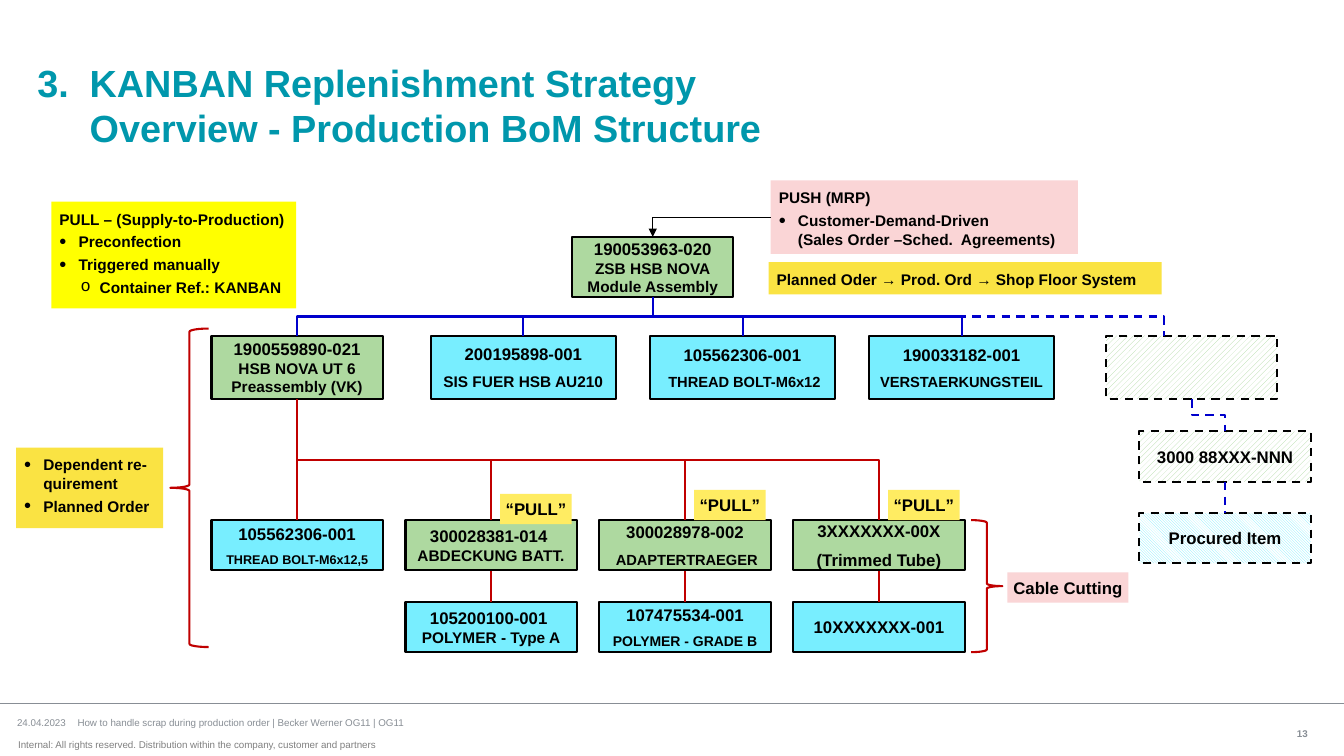
from pptx import Presentation, util as u
from pptx.dml.color import RGBColor
from pptx.enum import dml, shapes, text
from pptx.oxml import ns
from lxml import etree

GREEN, CYAN, BLACK, WHITE = "AED9A0", "78EEFF", "000000", "FFFFFF"
BLUE, RED, PINK, GOLD = "0000CC", "C00000", "FAD5D6", "FAE343"
GRAY, TEAL = "888E95", "0097AC"
UP = dml.MSO_PATTERN.WIDE_UPWARD_DIAGONAL
DOWN = dml.MSO_PATTERN.DARK_DOWNWARD_DIAGONAL
FORM, LINK = shapes.MSO_SHAPE, shapes.MSO_CONNECTOR
MID, TOP = text.MSO_ANCHOR.MIDDLE, text.MSO_ANCHOR.TOP
LEFT, MIDST, RIGHT = text.PP_ALIGN.LEFT, text.PP_ALIGN.CENTER, text.PP_ALIGN.RIGHT


def grid(*cells):
    return [u.Inches(cell / 10) for cell in cells]


def hue(code):
    return RGBColor.from_string(code)


def sub(node, tag, **attrs):
    return etree.SubElement(node, ns.qn("a:" + tag), attrs)


def style(para, size, color=BLACK, bold=True, align=LEFT, gap=0):
    para.alignment = align
    para.space_before = u.Pt(gap)
    font = para.font
    font.name, font.size, font.bold = "Arial", u.Pt(size), bold
    font.color.rgb = hue(color)


def frame(shape, inset=0, anchor=MID, wrap=True):
    body = shape.text_frame
    body.word_wrap, body.vertical_anchor = wrap, anchor
    body.auto_size = text.MSO_AUTO_SIZE.NONE
    body.margin_left = body.margin_right = u.Inches(inset)
    body.margin_top = body.margin_bottom = u.Inches(inset)
    return body


def paras(body, rows):
    for i, row in enumerate(rows):
        para = body.paragraphs[0] if i == 0 else body.add_paragraph()
        para.text = row[0]
        yield i, para, row


def form(slide, box, fill=None, edge=None, kind=FORM.RECTANGLE, mesh=None):
    shape = slide.shapes.add_shape(kind, *grid(*box))
    shape.shadow.inherit = False
    if mesh:
        shape.fill.patterned()
        shape.fill.pattern = mesh
        shape.fill.fore_color.rgb = hue(fill)
        shape.fill.back_color.rgb = hue(WHITE)
    elif fill:
        shape.fill.solid()
        shape.fill.fore_color.rgb = hue(fill)
    else:
        shape.fill.background()
    if edge:
        shape.line.color.rgb = hue(edge)
        shape.line.width = u.Pt(1.5)
    else:
        shape.line.fill.background()
    if mesh:
        shape.line.dash_style = dml.MSO_LINE.DASH
    return shape


def part(slide, box, fill, rows, mesh=None):
    shape = form(slide, box, fill, BLACK, mesh=mesh)
    for i, para, (_, size, gap) in paras(frame(shape, 0.08), rows):
        style(para, size, align=MIDST, gap=gap if i else 0)
    return shape


def tag(slide, box, fill, words):
    body = frame(form(slide, box, fill), 0.05, wrap=False)
    body.text = words
    style(body.paragraphs[0], 12, align=MIDST)


def note(slide, box, fill, rows):
    shape = form(slide, box, fill)
    for i, para, (_, mark) in paras(frame(shape, 0.08, TOP), rows):
        if mark:
            deep = mark == "o"
            props = para._p.get_or_add_pPr()
            props.set("marL", str(u.Inches(0.4 if deep else 0.19)))
            props.set("indent", str(-u.Inches(0.19)))
            sub(sub(props, "buClr"), "srgbClr", val=BLACK)
            sub(props, "buSzPct", val="110000" if deep else "130000")
            sub(props, "buFont", typeface="Courier New" if deep else "Arial")
            sub(props, "buChar", char=mark)
        style(para, 11, gap=3 if i else 0)
    return shape


def wire(slide, ends, color, kind=LINK.STRAIGHT, dash=False, width=1.5):
    line = slide.shapes.add_connector(kind, *ends)
    line.line.color.rgb = hue(color)
    line.line.width = u.Pt(width)
    if dash:
        line.line.dash_style = dml.MSO_LINE.DASH
    sub(line._element.spPr, "effectLst")
    return line


def foot_of(shape):
    return shape.left + shape.width // 2, shape.top + shape.height


def head_of(shape):
    return shape.left + shape.width // 2, shape.top


def drop(slide, above, below, color, dash=False):
    line = wire(slide, foot_of(above) + head_of(below), color, dash=dash)
    line.begin_connect(above, 2)
    line.end_connect(below, 0)


def bend(slide, above, below, color, dash=False, goal=None):
    x, y = foot_of(above)
    right, low = goal or head_of(below)
    line = wire(slide, (x, y, right, low), color, LINK.ELBOW, dash)
    line.begin_connect(above, 2)
    if not goal:
        line.end_connect(below, 0)
    wide, tall = abs(right - x), low - y
    line.left, line.top = (x + right - tall) // 2, (y + low - wide) // 2
    line.width, line.height = tall, wide
    turn = line._element.spPr.find(ns.qn("a:xfrm"))
    turn.attrib.pop("flipH", None)
    turn.set("rot", "16200000" if right > x else "5400000")
    if right > x:
        turn.set("flipH", "1")


def heading(slide, box):
    title = slide.shapes.title
    title.left, title.top, title.width, title.height = grid(*box)
    body = frame(title, anchor=TOP)
    body.text = "3.\tKANBAN Replenishment Strategy\vOverview - Production BoM Structure"
    props = body.paragraphs[0]._p.get_or_add_pPr()
    props.set("marL", str(u.Inches(0.52)))
    props.set("indent", str(-u.Inches(0.52)))
    style(body.paragraphs[0], 27, TEAL)


def footer(slide, box):
    x, y, w, h = box
    wire(slide, grid(x, y, x + w, y), GRAY, width=1)
    for place, words, color, bold, align in (
            ((1.7, 1.3, 75, 1.2), "24.04.2023\tHow to handle scrap during production order | Becker Werner OG11 | OG11", GRAY, False, LEFT),
            ((1.8, 3, 60, 2.2), "Internal: All rights reserved. Distribution within the company, customer and partners", "808080", False, LEFT),
            ((123, 2.4, 6.8, 1.2), "13", GRAY, True, RIGHT)):
        left, top, wide, tall = place
        area = slide.shapes.add_textbox(*grid(x + left, y + top, wide, tall))
        body = frame(area)
        body.text = words
        para = body.paragraphs[0]
        if "\t" in words:
            tabs = sub(para._p.get_or_add_pPr(), "tabLst")
            sub(tabs, "tab", pos=str(u.Inches(0.6)), algn="l")
        style(para, 7, color, bold, align)


def upper(slide, box):
    x, y, w, h = box
    root = part(slide, (x + 35.8, y, 16, 6), GREEN, [
        ("190053963-020", 12, 0), ("ZSB HSB NOVA", 11, 0), ("Module Assembly", 11, 0)])
    rows = [
        [("1900559890-021", 12, 0), ("HSB NOVA UT 6", 11, 0), ("Preassembly (VK)", 11, 0)],
        [("200195898-001", 12, 0), ("SIS FUER HSB AU210", 11, 6)],
        [("105562306-001", 12, 0), (" THREAD BOLT-M6x12", 10.5, 6)],
        [("190033182-001", 12, 0), ("VERSTAERKUNGSTEIL", 10.5, 6)]]
    kids = []
    for i, lines in enumerate(rows):
        place = (x + 21.75 * i, y + h - 6.3, 18.4 if i else 17, 6.3)
        kids.append(part(slide, place, CYAN if i else GREEN, lines))
        bend(slide, root, kids[i], BLUE)
    return root, kids[0]


def lower(slide, box, parent):
    x, y, w, h = box
    firsts = [
        [("105562306-001", 12, 0), ("THREAD BOLT-M6x12,5", 9, 6)],
        [("300028381-014 ", 12, 0), ("ABDECKUNG BATT.", 11, 0)],
        [("300028978-002", 12, 0), (" ADAPTERTRAEGER", 10.5, 6)],
        [("3XXXXXXX-00X", 12, 0), ("(Trimmed Tube)", 12, 6)]]
    seconds = [
        None,
        [("105200100-001 ", 12, 0), ("POLYMER - Type A", 11, 0)],
        [("107475534-001", 12, 0), ("POLYMER - GRADE B", 10, 6)],
        [("10XXXXXXX-001", 12, 0)]]
    for i, (first, second) in enumerate(zip(firsts, seconds)):
        left = x + 19.25 * i
        node = part(slide, (left, y, 17, 5), GREEN if i else CYAN, first)
        if second:
            bend(slide, parent, node, RED)
            leaf = part(slide, (left, y + h - 5, 17, 5), CYAN, second)
            drop(slide, node, leaf, RED)
            rise = 2.6 if i == 1 else 3
            tag(slide, (left + 9.4, y - rise, 7.1, 3), "FFEC62", "“PULL”")
        else:
            drop(slide, parent, node, RED)
    form(slide, (x - 4.1, y - 19, 3.8, 31.6), edge=RED, kind=FORM.LEFT_BRACE)
    form(slide, (x + w + 0.6, y, 3.1, h), edge=RED, kind=FORM.RIGHT_BRACE)
    tag(slide, (x + w + 4.2, y + 5.2, 12, 3), PINK, "Cable Cutting")


def branch(slide, box, root):
    x, y, w, h = box
    spare = part(slide, (x, y, 17, 6.3), GREEN, [], UP)
    item = part(slide, (x + w - 17, y + 9.5, 17, 5), GREEN, [("3000 88XXX-NNN", 12, 0)], UP)
    bought = part(slide, (x + w - 17, y + h - 5, 17, 5), CYAN, [("Procured Item", 12, 0)], DOWN)
    bend(slide, root, spare, BLUE, True, grid(x + 5.7, y))
    bend(slide, spare, item, BLUE, True)
    drop(slide, item, bought, BLUE, True)


def notes(slide, box, root):
    x, y, w, h = box
    push = note(slide, (x + 74.9, y, 30.5, 7.3), PINK, [
        ("PUSH (MRP)", ""),
        ("Customer-Demand-Driven\v(Sales Order –Sched.  Agreements)", "•")])
    note(slide, (x + 74.7, y + 8.1, 39, 3.2), GOLD, [
        ("Planned Oder → Prod. Ord → Shop Floor System", "")])
    note(slide, (x + 3.5, y + 2.1, 24.3, 10.6), "FFFF00", [
        ("PULL – (Supply-to-Production)", ""), ("Preconfection", "•"),
        ("Triggered manually", "•"), ("Container Ref.: KANBAN", "o")])
    note(slide, (x, y + h - 8, 14.6, 8), GOLD, [
        ("Dependent re-quirement", "•"), ("Planned Order", "•")])
    start = (push.left, push.top + push.height // 2)
    arrow = wire(slide, start + head_of(root), BLACK, LINK.ELBOW, width=0.75)
    arrow.begin_connect(push, 1)
    arrow.end_connect(root, 0)
    props = arrow._element.spPr
    props.find(ns.qn("a:prstGeom")).set("prst", "bentConnector2")
    sub(props.find(ns.qn("a:ln")), "tailEnd", type="triangle")


def main():
    deck = Presentation()
    deck.slide_width, deck.slide_height = grid(133.4, 75)
    slide = deck.slides.add_slide(deck.slide_layouts[5])
    heading(slide, (3.7, 5.9, 106, 9.4))
    footer(slide, (0, 69.8, 133.4, 5.2))
    root, child = upper(slide, (21, 23.5, 83.6, 16.1))
    lower(slide, (21, 51.6, 74.8, 13.1), child)
    branch(slide, (109.8, 33.3, 20.3, 22.6), root)
    notes(slide, (1.6, 17.9, 113.7, 34.5), root)
    deck.save("out.pptx")


if __name__ == "__main__":
    main()
